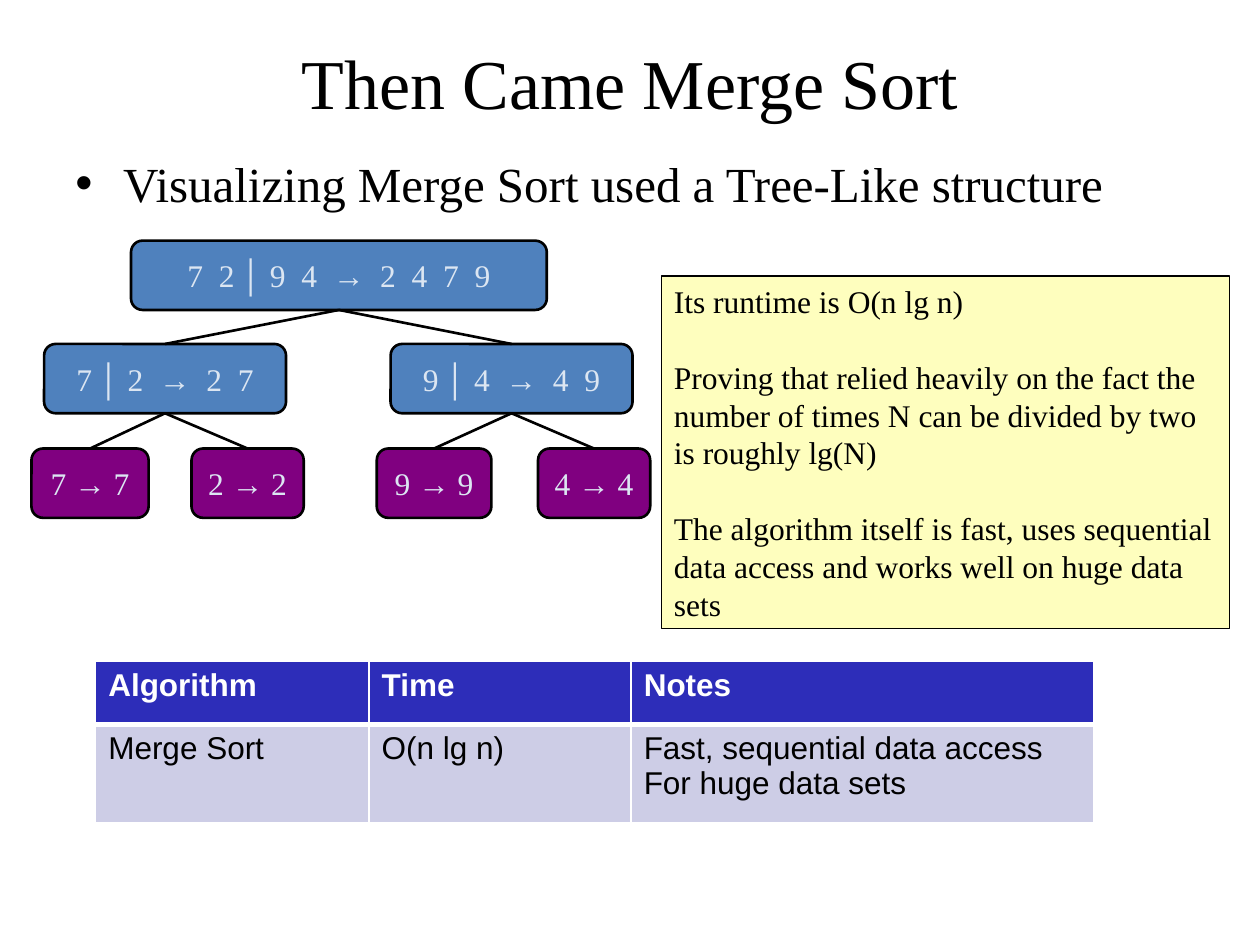
from itertools import groupby

from lxml import etree
from pptx import Presentation
from pptx import util as u
from pptx.dml.color import RGBColor
from pptx.enum import shapes, text
from pptx.oxml import ns

PX = 9144  # EMU in one px, at 100 px to the inch
SERIF, SANS = "Times New Roman", "Arial"
BLACK = RGBColor(0x00, 0x00, 0x00)
WHITE = RGBColor(0xFF, 0xFF, 0xFF)
BLUE = RGBColor(0x4F, 0x81, 0xBD)
PURPLE = RGBColor(0x80, 0x00, 0x80)
PALE_BLUE = RGBColor(0xDC, 0xE6, 0xF2)
CREAM = RGBColor(0xFE, 0xFE, 0xBE)
HEADER_BLUE = RGBColor(0x2D, 0x2D, 0xB9)
LAVENDER = RGBColor(0xCD, 0xCD, 0xE6)


def px(*lengths):
    return [u.Emu(length * PX) for length in lengths]


def style(font, size, color, name=SERIF, bold=False):
    font.size, font.name, font.bold = u.Pt(size), name, bold
    font.color.rgb = color


def add_title(page, box, wording):
    title = page.shapes.title
    title.left, title.top, title.width, title.height = px(*box)
    frame = title.text_frame
    frame.text = wording
    frame.vertical_anchor = text.MSO_ANCHOR.MIDDLE
    para = frame.paragraphs[0]
    para.alignment = text.PP_ALIGN.CENTER
    style(para.font, 40, BLACK)


def add_bullet(page, box, wording):
    frame = page.shapes.add_textbox(*px(*box)).text_frame
    frame.word_wrap = True
    para = frame.paragraphs[0]
    para.text = wording
    para.space_before = u.Pt(5.6)
    style(para.font, 28, BLACK)
    properties = para._p.get_or_add_pPr()
    indent = 38 * PX
    properties.set("marL", str(indent))
    properties.set("indent", str(-indent))
    etree.SubElement(properties, ns.qn("a:buFont")).set("typeface", SANS)
    etree.SubElement(properties, ns.qn("a:buChar")).set("char", "•")


def add_box(page, kind, box, fill, line_width):
    shape = page.shapes.add_shape(kind, *px(*box))
    shape.shadow.inherit = False
    shape.fill.solid()
    shape.fill.fore_color.rgb = fill
    shape.line.color.rgb = BLACK
    shape.line.width = u.Pt(line_width)
    return shape


def add_node(page, box, wording, fill):
    node = add_box(page, shapes.MSO_SHAPE.ROUNDED_RECTANGLE, box, fill, 1.5)
    frame = node.text_frame
    frame.word_wrap = False
    frame.vertical_anchor = text.MSO_ANCHOR.MIDDLE
    para = frame.paragraphs[0]
    para.alignment = text.PP_ALIGN.CENTER
    for symbol, letters in groupby(wording, lambda c: c if c in "│→" else ""):
        span = para.add_run()
        span.text = "".join(letters)
        style(span.font, 18, PALE_BLUE, SANS if symbol == "│" else SERIF, bool(symbol))
    return node


def add_branch(page, parent, child):
    branch = page.shapes.add_connector(shapes.MSO_CONNECTOR.STRAIGHT, 0, 0, 0, 0)
    branch.begin_connect(parent, 2)
    branch.end_connect(child, 0)
    branch.line.color.rgb = BLACK
    branch.line.width = u.Pt(1.5)
    etree.SubElement(branch._element.spPr, ns.qn("a:effectLst"))


def add_tree(page, box, levels):
    """Each level lists (offset from the left, width, wording); nodes have two children."""
    left, top, _, height = box
    node_height = 55
    step = (height - node_height) / (len(levels) - 1)
    parents = []
    for depth, level in enumerate(levels):
        fill = PURPLE if depth == len(levels) - 1 else BLUE
        node_top = top + round(depth * step)
        nodes = [add_node(page, (left + offset, node_top, width, node_height), wording, fill)
                 for offset, width, wording in level]
        for index, node in enumerate(nodes if parents else []):
            add_branch(page, parents[index // 2], node)
        parents = nodes


def add_note(page, box, wordings):
    note = add_box(page, shapes.MSO_SHAPE.RECTANGLE, box, CREAM, 0.75)
    frame = note.text_frame
    frame.word_wrap = True
    frame.vertical_anchor = text.MSO_ANCHOR.TOP
    line_height = u.Pt(21.6)
    for index, wording in enumerate(wordings):
        para = frame.add_paragraph() if index else frame.paragraphs[0]
        para.text = wording
        para.alignment = text.PP_ALIGN.LEFT
        para.line_spacing = line_height
        para.space_before = line_height if index else u.Pt(0)
        style(para.font, 18, BLACK)


def add_border(cell, side, width):
    border = etree.SubElement(cell._tc.get_or_add_tcPr(), ns.qn(f"a:ln{side}"))
    border.set("w", str(u.Pt(width)))
    fill = etree.SubElement(border, ns.qn("a:solidFill"))
    etree.SubElement(fill, ns.qn("a:srgbClr")).set("val", str(WHITE))


def add_table(page, box, widths, heights, rows):
    table = page.shapes.add_table(len(rows), len(widths), *px(*box)).table
    for column, width in zip(table.columns, px(*widths)):
        column.width = width
    for row, height in zip(table.rows, px(*heights)):
        row.height = height
    for row_index, row in enumerate(rows):
        header = row_index == 0
        for column_index, wording in enumerate(row):
            cell = table.cell(row_index, column_index)
            cell.text = wording
            for para in cell.text_frame.paragraphs:
                style(para.font, 18, WHITE if header else BLACK, SANS, header)
            for side, width in zip("LRTB", (1, 1, 1, 3) if header else (1, 1, 3, 1)):
                add_border(cell, side, width)
            cell.fill.solid()
            cell.fill.fore_color.rgb = HEADER_BLUE if header else LAVENDER


def main():
    deck = Presentation()
    deck.slide_width, deck.slide_height = px(1000, 750)
    page = deck.slides.add_slide(deck.slide_layouts.get_by_name("Title Only"))
    add_table(page, (76, 525, 792, 128), (217, 208, 367), (50, 78), [
        ("Algorithm", "Time", "Notes"),
        ("Merge Sort", "O(n lg n)", "Fast, sequential data access\nFor huge data sets"),
    ])
    add_title(page, (50, 30, 900, 70), "Then Came Merge Sort")
    add_bullet(page, (50, 117, 900, 67), "Visualizing Merge Sort used a Tree-Like structure")
    add_tree(page, (25, 191, 491, 220), [
        [(79, 330, "7  2 │ 9  4  →  2  4  7  9")],
        [(10, 192, "7 │ 2  →  2  7"), (285, 192, "9 │ 4  →  4  9")],
        [(0, 93, "7 → 7"), (127, 89, "2 → 2"), (274, 91, "9 → 9"), (402, 89, "4 → 4")],
    ])
    add_note(page, (525, 219, 451, 280), [
        "Its runtime is O(n lg n)",
        "Proving that relied heavily on the fact the number of times N can be divided by two "
        "is roughly lg(N)",
        "The algorithm itself is fast, uses sequential data access and works well on huge data sets",
    ])
    deck.save("out.pptx")


if __name__ == "__main__":
    main()
